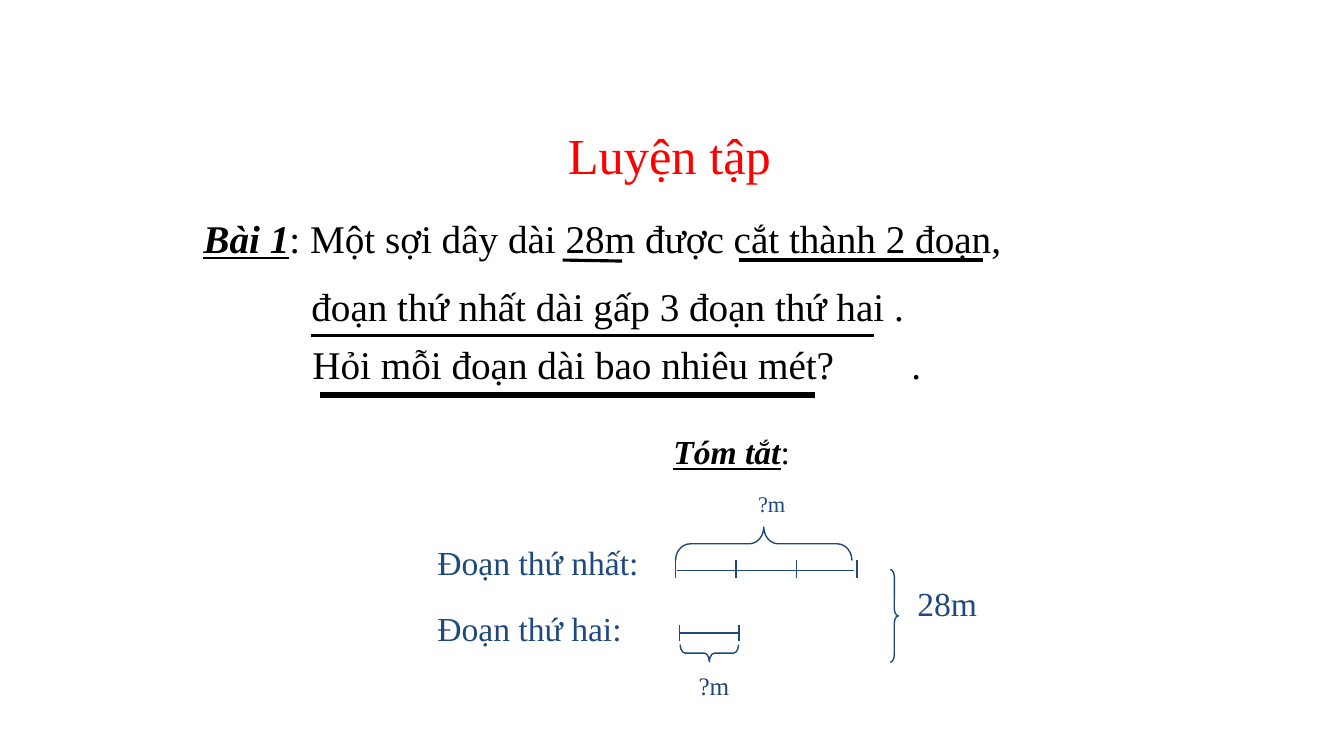
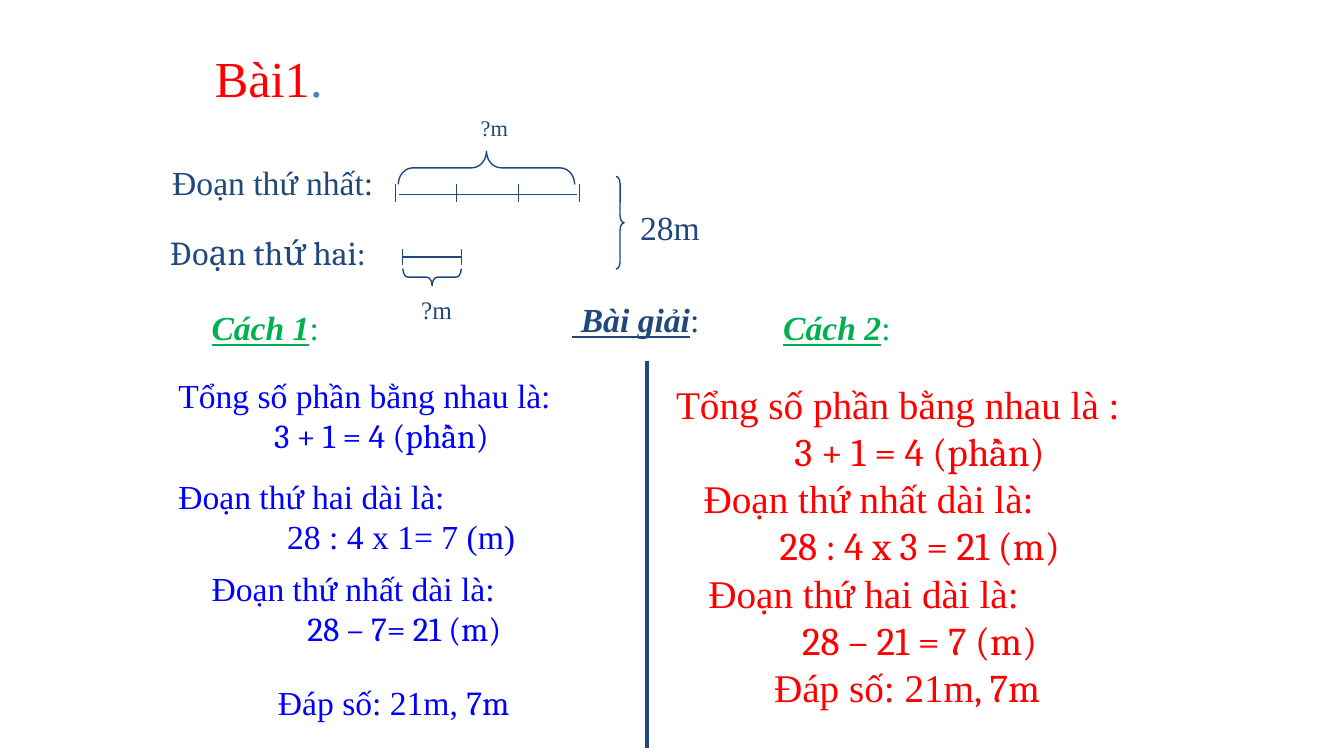
from pptx import Presentation
from pptx.dml.color import RGBColor
from pptx.enum.shapes import MSO_CONNECTOR as Connector, MSO_SHAPE as Preset
from pptx.enum.text import MSO_ANCHOR as Anchor, PP_ALIGN as Align
from pptx.oxml.ns import qn
from pptx.oxml.xmlchemy import OxmlElement
from pptx.util import Inches, Pt

COLORS = {"black": "000000", "red": "FF0000", "navy": "1F497D",
          "sky": "4F81BD", "green": "00B050", "blue": "0000FF"}
SERIF, CAMBRIA = "Times New Roman", "Cambria"
HEADING = {"bold": True, "italic": True, "underline": True}

TITLES = [
    ((5.1, 1.18, 3.08, 0.49), [("Luyện tập", {})]),
    ((1.79, 0.42, 1.75, 0.33), [("Bài1", {}), (".", {"color": "sky"})]),
]

PROBLEM = [
    ((1.92, 2.08, 9.33, 1.27), [
        {"runs": [("Bài 1", HEADING), (": Một sợi dây dài 28m được cắt thành 2 đoạn,", {})]},
        {"runs": [("đoạn thứ nhất dài gấp 3 đoạn thứ hai .", {})], "indent": 1.07, "before": 15},
    ]),
    ((3, 3.33, 6.83, 0.57), [
        {"runs": [("Hỏi mỗi đoạn dài bao nhiêu mét?\t.", {})], "tab": 5.94},
    ]),
]
UNDERLINES = [
    (5.58, 2.58, 6.17, 2.59, 2.25),
    (3.08, 3.33, 8.67, 3.33, 2.25),
    (7.33, 2.58, 9.75, 2.58, 2.25),
    (3.17, 3.92, 8.08, 3.92, 4.5),
]
SUMMARY_HEADING = ((6.58, 4.23, 2.5, 0.5), "Tóm tắt", "black")
SOLUTION_HEADINGS = [
    ((5.58, 2.92, 2, 0.5), " Bài giải", "navy"),
    ((2, 3, 2, 0.5), "Cách 1", "green"),
    ((7.67, 3, 2, 0.5), "Cách 2", "green"),
]
DIVIDER = (6.42, 3.58, 6.42, 7.42)

DIAGRAMS = [
    {"origin": (6.71, 5.66), "first_tick": -0.01, "total_brace": (2.12, -0.01),
     "first_name": (-2.47, -0.33), "second_name": (-2.47, 0.32), "second_font": SERIF},
    {"origin": (3.96, 1.93), "first_tick": -0.04, "total_brace": (2.15, -0.18),
     "first_name": (-2.35, -0.37), "second_name": (-2.37, 0.32), "second_font": CAMBRIA},
]
LAST_TICK = 1.79
PARTS = 3
SEGMENTS = [(0, 0, 1.76, 0), (0.03, 0.62, 0.61, 0.62)]
SECOND_TICKS = (0.03, 0.62)
UNKNOWNS = [
    {"label": (0.12, 0.94, 0.83, 0.4), "size": 18,
     "brace": (0.24, 0.53, 0.17, 0.58), "bend": 0.292, "turn": 90},
    {"label": (0.71, -0.85, 0.5, 0.37), "size": 16,
     "brace": (0.7, -1.14, 0.33, 1.75), "bend": 0.438, "turn": 270},
]

FIRST_METHOD = [
    ((1.67, 3.67, 4.67, 0.91), "Tổng số phần bằng nhau là:", "3 + 1 = 4 (phần)", CAMBRIA, 0.95),
    ((1.67, 4.67, 4.83, 0.91), "Đoạn thứ hai dài là:", "28 : 4 x 1= 7 (m)", SERIF, 1.08),
    ((2, 5.58, 3.83, 0.91), "Đoạn thứ nhất dài là:", "28 – 7= 21 (m)", CAMBRIA, 0.95),
]
FIRST_ANSWER = ((2.08, 6.72, 3.65, 0.5), [("Đáp số: 21m, ", {}), ("7m", {"name": CAMBRIA})])
SECOND_METHOD_BOX = (5.19, 3.71, 6.75, 3.4)
SECOND_METHOD = [
    ([("Tổng số phần bằng nhau là :", {})], 0.68),
    ([("3 + 1 = 4 (phần)", {"name": CAMBRIA})], 1.11),
    ([("Đoạn thứ nhất dài là:", {})], 0.1),
    ([("28 : 4 x 3 = 21 (m)", {"name": CAMBRIA})], 1.11),
    ([("Đoạn thứ hai dài là:", {})], 0),
    ([("28 – 21 = 7 (m)", {"name": CAMBRIA})], 1.11),
    ([("Đáp số: 21m", {}), (", 7m", {"name": CAMBRIA})], 0.86),
]


def rgb(color):
    return RGBColor.from_string(COLORS[color])


def add_text(slide, box, paragraphs, size, color, align=Align.LEFT, anchor=Anchor.TOP, wrap=True):
    frame = slide.shapes.add_textbox(*map(Inches, box)).text_frame
    frame.word_wrap = wrap
    frame.vertical_anchor = anchor
    for index, content in enumerate(paragraphs):
        paragraph = frame.add_paragraph() if index else frame.paragraphs[0]
        paragraph.alignment = align
        if "before" in content:
            paragraph.space_before = Pt(content["before"])
        properties = paragraph._p.get_or_add_pPr()
        if content.get("indent"):
            properties.set("marL", str(Inches(content["indent"])))
            properties.set("indent", "0")
        if "tab" in content:
            tabs = OxmlElement("a:tabLst")
            tab = OxmlElement("a:tab")
            tab.set("pos", str(Inches(content["tab"])))
            tab.set("algn", "l")
            tabs.append(tab)
            properties.append(tabs)
        for words, changes in content["runs"]:
            run = paragraph.add_run()
            run.text = words
            style = {"name": SERIF, "size": Pt(size), "color": color, **changes}
            run.font.color.rgb = rgb(style.pop("color"))
            for attribute, value in style.items():
                setattr(run.font, attribute, value)


def add_label(slide, box, words, size=24, font=SERIF):
    add_text(slide, box, [{"runs": [(words, {"name": font})]}], size, "navy")


def add_title(slide, title):
    box, runs = title
    add_text(slide, box, [{"runs": runs}], 36, "red", Align.CENTER, wrap=False)


def add_heading(slide, box, words, color):
    add_text(slide, box, [{"runs": [(words, HEADING), (":", {})]}], 24, color)


def add_line(slide, ends, color="navy", width=1):
    line = slide.shapes.add_connector(Connector.STRAIGHT, *map(Inches, ends))
    line.line.color.rgb = rgb(color)
    line.line.width = Pt(width)
    line._element.spPr.append(OxmlElement("a:effectLst"))


def add_brace(slide, box, bend, turn=0):
    brace = slide.shapes.add_shape(Preset.RIGHT_BRACE, *map(Inches, box))
    brace.adjustments[0] = bend
    brace.rotation = turn
    brace.shadow.inherit = False
    brace.fill.background()
    brace.line.color.rgb = rgb("navy")
    brace.line.width = Pt(1)


def add_diagram(slide, diagram):
    left, top = diagram["origin"]

    def place(x, y, *extent):
        return (left + x, top + y, *extent)

    for x1, y1, x2, y2 in SEGMENTS:
        add_line(slide, place(x1, y1) + place(x2, y2))
    start = diagram["first_tick"]
    step = (LAST_TICK - start) / PARTS
    ticks = [(start + step * part, -0.1, 0.07) for part in range(PARTS + 1)]
    ticks += [(x, 0.54, 0.7) for x in SECOND_TICKS]
    for x, upper, lower in ticks:
        add_line(slide, place(x, upper) + place(x, lower))
    add_brace(slide, place(*diagram["total_brace"], 0.08, 0.92), 0.917)
    add_label(slide, place(2.29, 0.07, 0.83, 0.5), "28m")
    for unknown in UNKNOWNS:
        add_brace(slide, place(*unknown["brace"]), unknown["bend"], unknown["turn"])
        add_label(slide, place(*unknown["label"]), "?m", unknown["size"])
    add_label(slide, place(*diagram["first_name"], 2.5, 0.5), "Đoạn thứ nhất:")
    add_label(slide, place(*diagram["second_name"], 2.24, 0.5), "Đoạn thứ hai:",
              font=diagram["second_font"])


def add_problem(slide):
    for box, paragraphs in PROBLEM:
        add_text(slide, box, paragraphs, 28, "black")
    for *ends, width in UNDERLINES:
        add_line(slide, ends, "black", width)
    add_heading(slide, *SUMMARY_HEADING)


def add_solution(slide):
    for heading in SOLUTION_HEADINGS:
        add_heading(slide, *heading)
    add_line(slide, DIVIDER, width=3)
    for box, statement, working, font, indent in FIRST_METHOD:
        add_text(slide, box, [{"runs": [(statement, {})]},
                              {"runs": [(working, {"name": font})], "indent": indent}], 24, "blue")
    box, runs = FIRST_ANSWER
    add_text(slide, box, [{"runs": runs}], 24, "blue", Align.CENTER)
    steps = [{"runs": runs, "indent": indent} for runs, indent in SECOND_METHOD]
    add_text(slide, SECOND_METHOD_BOX, steps, 28, "red", Align.CENTER, Anchor.MIDDLE)


def main():
    deck = Presentation()
    deck.slide_width, deck.slide_height = Inches(13.33), Inches(7.5)
    for title, diagram, add_body in zip(TITLES, DIAGRAMS, (add_problem, add_solution)):
        slide = deck.slides.add_slide(deck.slide_layouts[6])
        add_title(slide, title)
        add_body(slide)
        add_diagram(slide, diagram)
    deck.save("out.pptx")


if __name__ == "__main__":
    main()
